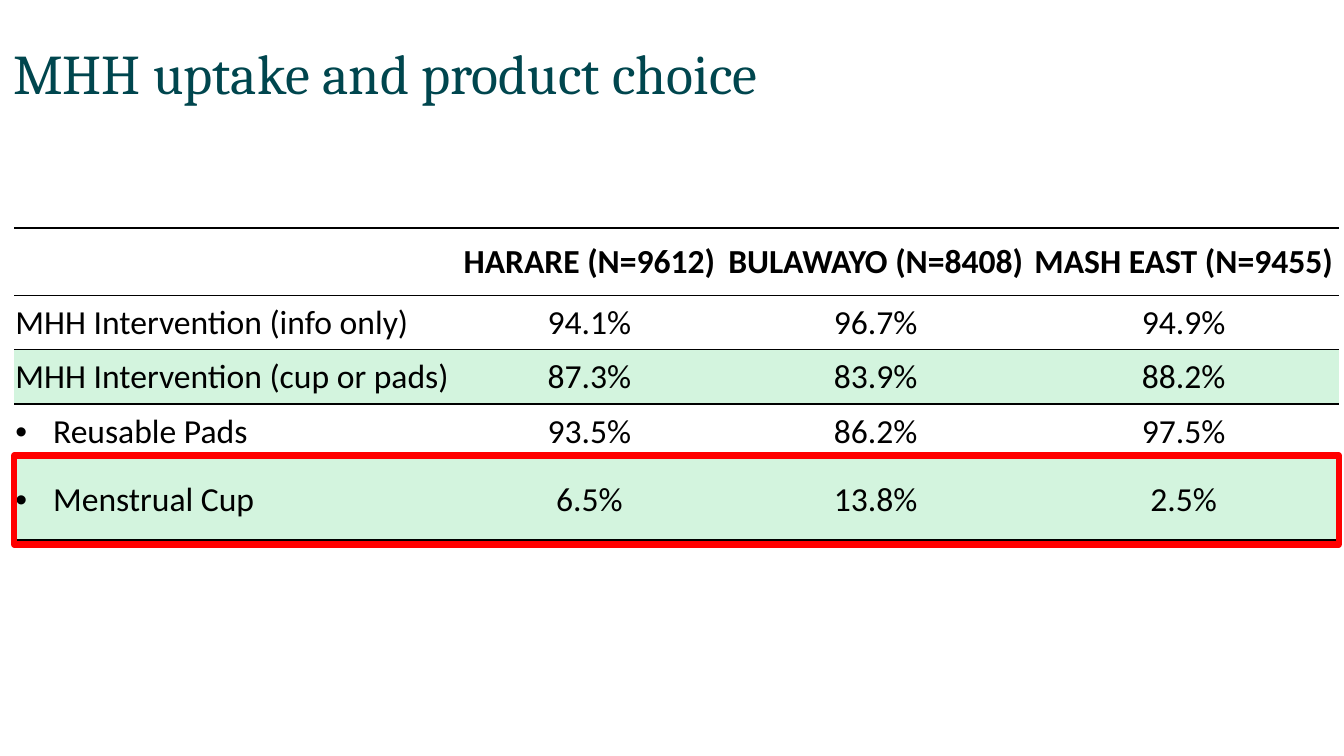
from lxml.etree import SubElement
from pptx import Presentation
from pptx.dml.color import RGBColor
from pptx.enum.shapes import MSO_SHAPE
from pptx.enum.text import MSO_ANCHOR, PP_ALIGN
from pptx.oxml import parse_xml
from pptx.oxml.ns import nsdecls, qn
from pptx.util import Cm, Pt

TEAL = RGBColor(0x00, 0x46, 0x4E)
BLACK = RGBColor(0x00, 0x00, 0x00)
WHITE = RGBColor(0xFF, 0xFF, 0xFF)
MINT = RGBColor(0xD3, 0xF4, 0xDE)
RED = RGBColor(0xFF, 0x00, 0x00)

NO_STYLE = "{2D5ABB26-0587-4C30-8999-92F81FD0307C}"
UPTAKE = [
    ("", "HARARE (N=9612)", "BULAWAYO (N=8408)", "MASH EAST (N=9455)"),
    ("MHH Intervention (info only)", "94.1%", "96.7%", "94.9%"),
    ("MHH Intervention (cup or pads)", "87.3%", "83.9%", "88.2%"),
    ("Reusable Pads", "93.5%", "86.2%", "97.5%"),
    ("Menstrual Cup", "6.5%", "13.8%", "2.5%"),
]
COLUMN_WIDTHS = [11.13, 6.73, 7.7, 7.82]
ROW_HEIGHTS = [1.7, 1.37, 1.37, 1.37, 2.06]
ROW_FILLS = [WHITE, None, MINT, None, MINT]
# Border widths in points for each row, top before bottom
ROW_BORDERS = [
    {"lnT": 2, "lnB": 1},
    {"lnT": 1, "lnB": 1},
    {"lnT": 1},
    {},
    {"lnB": 2},
]
PRODUCT_ROWS = (3, 4)
CELL_FORMAT = {
    "margin_left": Cm(0.03),
    "margin_right": Cm(0.03),
    "margin_top": Cm(0.03),
    "margin_bottom": Cm(0),
    "vertical_anchor": MSO_ANCHOR.MIDDLE,
}


def add_borders(cell, borders):
    properties = cell._tc.get_or_add_tcPr()
    for position, (side, points) in enumerate(borders.items()):
        properties.insert(position, parse_xml(
            f'<a:{side} {nsdecls("a")} w="{Pt(points)}"><a:solidFill>'
            f'<a:srgbClr val="{BLACK}"/></a:solidFill></a:{side}>'))


def add_bullet(paragraph):
    properties = paragraph._p.get_or_add_pPr()
    properties.set("marL", str(Cm(0.95)))
    properties.set("indent", str(-Cm(0.95)))
    SubElement(properties, qn("a:buFont")).set("typeface", "Arial")
    SubElement(properties, qn("a:buChar")).set("char", "•")


presentation = Presentation()
presentation.slide_width = Cm(33.87)
presentation.slide_height = Cm(19.05)
slide = presentation.slides.add_slide(presentation.slide_layouts[5])

# Title
title = slide.shapes.title
title.left, title.top, title.width, title.height = Cm(0.08), Cm(0.94), Cm(25.63), Cm(1.96)
title.text_frame.text = "MHH uptake and product choice"
title.text_frame.vertical_anchor = MSO_ANCHOR.MIDDLE
heading = title.text_frame.paragraphs[0]
heading.alignment = PP_ALIGN.LEFT
heading.line_spacing = 0.9
heading.font.name = "Cambria"
heading.font.size = Pt(40)
heading.font.color.rgb = TEAL

# Uptake table
uptake_frame = slide.shapes.add_table(
    len(UPTAKE), len(COLUMN_WIDTHS), Cm(0.36), Cm(5.74),
    Cm(sum(COLUMN_WIDTHS)), Cm(sum(ROW_HEIGHTS)))
uptake = uptake_frame.table
uptake.first_row = uptake.horz_banding = False
uptake._tbl.tblPr.find(qn("a:tableStyleId")).text = NO_STYLE
for column, width in zip(uptake.columns, COLUMN_WIDTHS):
    column.width = Cm(width)
for row, height in zip(uptake.rows, ROW_HEIGHTS):
    row.height = Cm(height)

for r, values in enumerate(UPTAKE):
    for c, value in enumerate(values):
        cell = uptake.cell(r, c)
        for name, setting in CELL_FORMAT.items():
            setattr(cell, name, setting)
        if ROW_FILLS[r] is None:
            cell.fill.background()
        else:
            cell.fill.solid()
            cell.fill.fore_color.rgb = ROW_FILLS[r]
        add_borders(cell, ROW_BORDERS[r])

        cell.text = value
        paragraph = cell.text_frame.paragraphs[0]
        paragraph.alignment = PP_ALIGN.CENTER if c else PP_ALIGN.LEFT
        if c == 0 and r in PRODUCT_ROWS:
            add_bullet(paragraph)
        paragraph.font.name = "Calibri"
        paragraph.font.size = Pt(24)
        paragraph.font.bold = r == 0
        paragraph.font.color.rgb = BLACK

# Frame around the menstrual cup row
cup_frame = slide.shapes.add_shape(
    MSO_SHAPE.RECTANGLE, Cm(0.36), Cm(11.48), Cm(33.38), Cm(2.24))
cup_frame.shadow.inherit = False
cup_frame.fill.background()
cup_frame.line.color.rgb = RED
cup_frame.line.width = Pt(4.5)

presentation.save("out.pptx")
